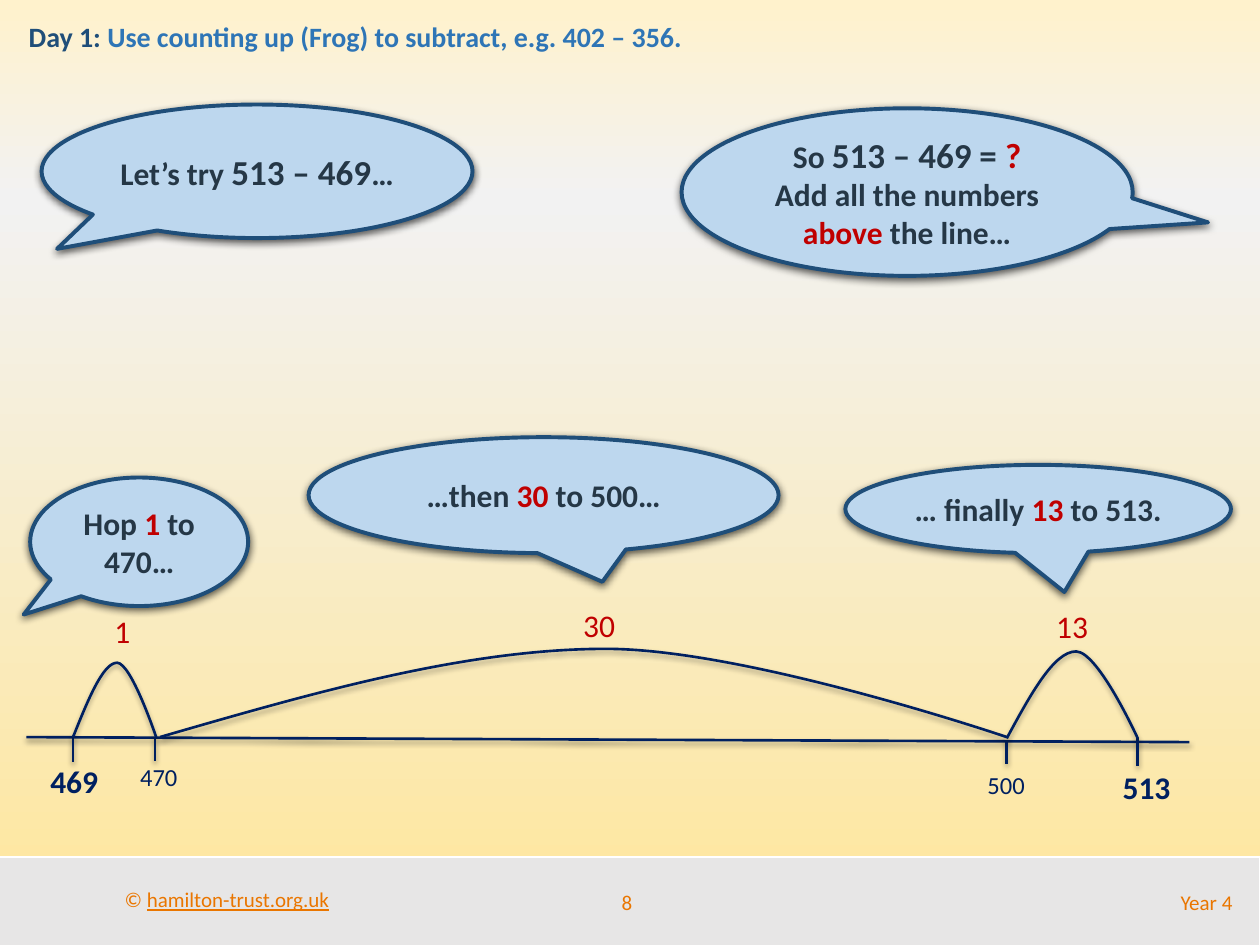
import copy
import pptx
import pptx.util
import pptx.dml.color
import pptx.enum.shapes
import pptx.enum.text
import pptx.oxml
import pptx.oxml.ns

Inches = pptx.util.Inches
Pt = pptx.util.Pt
RGBColor = pptx.dml.color.RGBColor
Align = pptx.enum.text.PP_ALIGN
Anchor = pptx.enum.text.MSO_ANCHOR
Fit = pptx.enum.text.MSO_AUTO_SIZE
Kind = pptx.enum.shapes.MSO_SHAPE
qn = pptx.oxml.ns.qn

NAVY = RGBColor(0x00, 0x20, 0x60)
DEEP = RGBColor(0x1F, 0x4E, 0x79)
BLUE = RGBColor(0x2E, 0x75, 0xB6)
PALE = RGBColor(0xBD, 0xD7, 0xEE)
INK = RGBColor(0x25, 0x37, 0x46)
RED = RGBColor(0xC0, 0x00, 0x00)
ORANGE = RGBColor(0xEA, 0x76, 0x00)
GREY = RGBColor(0xE7, 0xE6, 0xE6)
WHITE = RGBColor(0xFF, 0xFF, 0xFF)
CREAM = RGBColor(0xFF, 0xF2, 0xCC)
MIST = RGBColor(0xF2, 0xF2, 0xF2)
SAND = RGBColor(0xFF, 0xE6, 0x99)


def write(shape, lines, size, bold=False, align=Align.CENTER, anchor=Anchor.TOP):
    """Fill a shape with lines, each a list of (text, colour[, size]) runs."""
    frame = shape.text_frame
    frame.word_wrap = True
    frame.vertical_anchor = anchor
    for i, line in enumerate(lines):
        para = frame.add_paragraph() if i else frame.paragraphs[0]
        para.alignment = align
        para.font.name = "Calibri"
        para.font.size = Pt(size)
        para.font.bold = bold
        for text, color, *own in line:
            run = para.add_run()
            run.text = text
            run.font.color.rgb = color
            if own:
                run.font.size = Pt(own[0])
    return frame


def style(shape, color, width, alpha, blur, dist):
    """Set the outline and a soft shadow that falls straight down."""
    shape.line.color.rgb = color
    shape.line.width = Pt(width)
    props = shape.element.spPr
    for old in props.findall(qn("a:effectLst")):
        props.remove(old)
    props.append(pptx.oxml.parse_xml(
        '<a:effectLst xmlns:a="http://schemas.openxmlformats.org/drawingml/2006/main">'
        f'<a:outerShdw blurRad="{Pt(blur)}" dist="{Pt(dist)}" dir="5400000" rotWithShape="0">'
        f'<a:srgbClr val="000000"><a:alpha val="{alpha * 1000}"/></a:srgbClr>'
        '</a:outerShdw></a:effectLst>'))


deck = pptx.Presentation()
deck.slide_width = Inches(10)
deck.slide_height = Inches(7.5)
slide = deck.slides.add_slide(deck.slide_layouts[6])
shapes = slide.shapes

# Background: three-stop gradient from top to bottom
fill = slide.background.fill
fill.gradient()
fill.gradient_angle = 270
stops = slide.element.find(".//" + qn("a:gsLst"))
stops.insert(1, copy.deepcopy(stops[0]))
for stop, (place, color) in zip(fill.gradient_stops, [(0, CREAM), (0.21, MIST), (1, SAND)]):
    stop.position = place
    stop.color.rgb = color

# Footer band and its texts
band = shapes.add_shape(Kind.RECTANGLE, Inches(-0.06), Inches(6.8), Inches(10.06), Inches(0.72))
band.shadow.inherit = False
band.fill.solid()
band.fill.fore_color.rgb = GREY
band.line.color.rgb = WHITE
band.line.width = Pt(1)

credit = shapes.add_textbox(Inches(0.89), Inches(6.99), Inches(1.84), Inches(0.3))
frame = write(credit, [[("© ", ORANGE), ("hamilton-trust.org.uk", ORANGE)]], 12, align=Align.LEFT)
frame.word_wrap = False
frame.paragraphs[0].runs[1].font.underline = True

for left, wide, text, align in [(4.58, 0.79, "8", Align.CENTER),
                                (6.5, 3.38, "Year 4", Align.RIGHT)]:
    box = shapes.add_textbox(Inches(left), Inches(6.96), Inches(wide), Inches(0.4))
    write(box, [[(text, ORANGE)]], 12, align=align, anchor=Anchor.MIDDLE)

# Title
title = shapes.add_textbox(Inches(0.13), Inches(0.11), Inches(8.33), Inches(0.37))
write(title, [[("Day 1: ", DEEP), ("Use counting up (Frog) to subtract, e.g. 402 – 356.", BLUE)]],
      16, True, Align.LEFT)

# Number line and its ticks
for x1, y1, x2, y2 in [(0.21, 5.85, 9.44, 5.89), (0.58, 5.86, 0.58, 6.05),
                       (1.23, 5.86, 1.23, 6.04), (7.99, 5.87, 7.99, 6.06),
                       (9.03, 5.86, 9.03, 6.08)]:
    line = shapes.add_connector(pptx.enum.shapes.MSO_CONNECTOR.STRAIGHT,
                                Inches(x1), Inches(y1), Inches(x2), Inches(y2))
    style(line, NAVY, 1.5, 38, 3.1, 1.6)

# Hops: two cubic curves that meet at the peak
for start, peak, end, top, base in [(0.58, 0.93, 1.24, 5.26, 5.85),
                                    (1.27, 4.81, 7.99, 5.15, 5.85),
                                    (7.99, 8.54, 9.03, 5.17, 5.86)]:
    step = 0.18 * (end - start)
    near = start + 2 * step
    points = [(start + step, (base + top) / 2), (near, top), (peak, top),
              (2 * peak - near, top), (end, base), (end, base)]
    pen = shapes.build_freeform(Inches(start), Inches(base))
    pen.add_line_segments([(Inches(x), Inches(y)) for x, y in points], close=False)
    hop = pen.convert_to_shape()
    # Turn each three straight segments into one cubic curve
    track = hop.element.find(".//" + qn("a:path"))
    parts = track.findall(qn("a:lnTo"))
    for i in (0, 3):
        curve = track.makeelement(qn("a:cubicBezTo"))
        for part in parts[i:i + 3]:
            curve.append(part[0])
            track.remove(part)
        track.append(curve)
    hop.fill.background()
    style(hop, NAVY, 1.5, 35, 3.1, 1.8)

# Labels below the ticks and above the hops
for left, top, wide, high, text, size, color, bold in [
        (0.21, 6, 0.76, 0.4, "469", 18, NAVY, True),
        (0.92, 6, 0.68, 0.34, "470", 14, NAVY, False),
        (7.71, 6.06, 0.55, 0.34, "500", 14, NAVY, False),
        (8.72, 6.05, 0.76, 0.4, "513", 18, NAVY, True),
        (0.81, 4.81, 0.2, 0.4, "1", 18, RED, False),
        (4.4, 4.76, 0.71, 0.4, "30", 18, RED, False),
        (8.26, 4.77, 0.5, 0.4, "13", 18, RED, False)]:
    box = shapes.add_textbox(Inches(left), Inches(top), Inches(wide), Inches(high))
    frame = write(box, [[(text, color)]], size, bold)
    frame.auto_size = Fit.SHAPE_TO_FIT_TEXT

# Speech bubbles: place, tail point, lines
for place, tail, lines in [
        ((2.45, 3.47, 3.73, 0.92), (0.125, 0.747),
         [[("…then ", INK), ("30", RED), (" to 500…", INK)]]),
        ((5.41, 0.86, 3.58, 1.33), (0.667, 0.181),
         [[("So ", INK), ("513 – 469 = ", INK, 20), ("?", RED, 20)],
          [("Add all the numbers ", INK), ("above ", RED), ("the line…", INK)]]),
        ((0.33, 0.83, 3.42, 1.06), (-0.464, 0.581),
         [[("Let’s try ", INK), ("513 – 469", INK, 20), ("…", INK)]]),
        ((6.71, 3.69, 3.06, 0.7), (0.068, 0.941),
         [[("… finally ", INK), ("13", RED), (" to 513.", INK)]]),
        ((0.24, 3.79, 1.73, 1.02), (-0.53, 0.566),
         [[("Hop ", INK), ("1 ", RED), ("to 470…", INK)]])]:
    bubble = shapes.add_shape(Kind.OVAL_CALLOUT, *map(Inches, place))
    bubble.adjustments[0], bubble.adjustments[1] = tail
    bubble.fill.solid()
    bubble.fill.fore_color.rgb = PALE
    style(bubble, DEEP, 2.25, 63, 4.5, 1.5)
    write(bubble, lines, 18, True, anchor=Anchor.MIDDLE)

deck.save("out.pptx")
